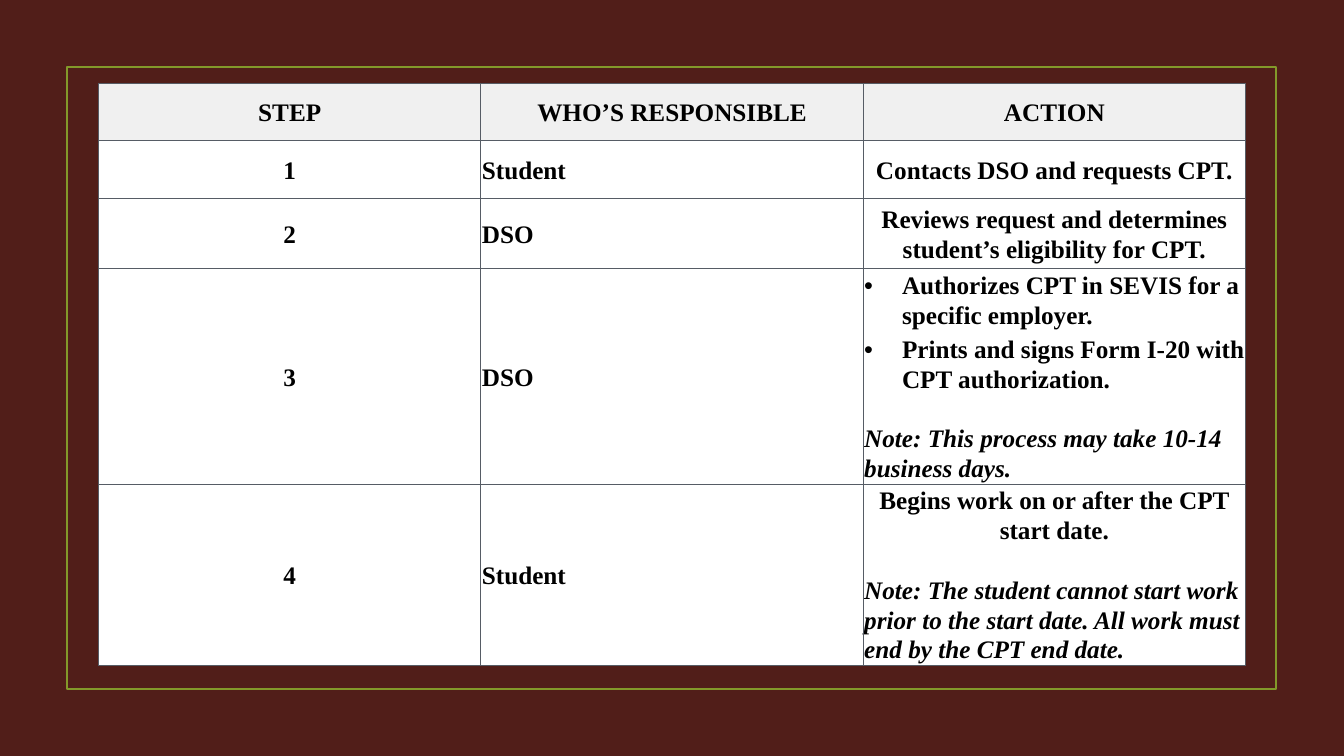
from dataclasses import dataclass

from lxml import etree
from pptx import Presentation
from pptx.dml.color import RGBColor
from pptx.enum import shapes, text
from pptx.oxml import ns
from pptx.util import Pt


@dataclass(frozen=True)
class Theme:
    background: str = "511E19"
    frame: str = "83992A"
    border: str = "565C65"
    header: str = "F0F0F0"
    body: str = "FFFFFF"
    ink: str = "000000"
    font: str = "Times New Roman"
    size: float = 18
    line_spacing: float = 1.07
    inset: float = 0.72
    frame_width: float = 1.25
    border_width: float = 1
    bullet_indent: float = 27


@dataclass(frozen=True)
class Para:
    text: str
    centred: bool = False
    bullet: bool = False
    italic: bool = False
    before: float = 0
    after: float = 0


@dataclass(frozen=True)
class Step:
    who: str
    action: tuple[Para, ...]
    height: float


THEME = Theme()
NOTE_GAP = 21.4
HEADER_HEIGHT = 41.04
COLUMN_WIDTH = 273.1
HEADINGS = ("STEP", "WHO’S RESPONSIBLE", "ACTION")
STEPS = (
    Step("Student", (Para("Contacts DSO and requests CPT.", centred=True),), 41.04),
    Step("DSO", (Para("Reviews request and determines student’s eligibility for CPT.",
                      centred=True),), 50.4),
    Step("DSO", (
        Para("Authorizes CPT in SEVIS for a specific employer.", bullet=True, after=3),
        Para("Prints and signs Form I-20 with CPT authorization.", bullet=True),
        Para("Note: This process may take 10-14 business days.", italic=True, before=NOTE_GAP),
    ), 153.5),
    Step("Student", (
        Para("Begins work on or after the CPT start date.", centred=True),
        Para("Note: The student cannot start work prior to the start date. "
             "All work must end by the CPT end date.", italic=True, before=NOTE_GAP),
    ), 129.3),
)


def rgb(value: str) -> RGBColor:
    return RGBColor.from_string(value)


def add_frame(slide) -> None:
    sp = slide.shapes.add_shape(shapes.MSO_SHAPE.RECTANGLE, Pt(47.7), Pt(48), Pt(864), Pt(444))
    sp.shadow.inherit = False
    sp.fill.background()
    sp.line.color.rgb = rgb(THEME.frame)
    sp.line.width = Pt(THEME.frame_width)


def add_bullet(p) -> None:
    pPr = p._p.get_or_add_pPr()
    pPr.set("marL", str(Pt(THEME.bullet_indent)))
    pPr.set("indent", str(-Pt(THEME.bullet_indent)))
    etree.SubElement(pPr, ns.qn("a:buFont"), typeface="Arial")
    etree.SubElement(pPr, ns.qn("a:buChar"), char="•")


def write_paragraph(p, para: Para) -> None:
    if para.bullet:
        add_bullet(p)
    p.alignment = text.PP_ALIGN.CENTER if para.centred else text.PP_ALIGN.LEFT
    p.line_spacing = THEME.line_spacing
    p.space_before = Pt(para.before)
    p.space_after = Pt(para.after)
    r = p.add_run()
    r.text = para.text
    r.font.name = THEME.font
    r.font.size = Pt(THEME.size)
    r.font.bold = True
    r.font.italic = para.italic
    r.font.color.rgb = rgb(THEME.ink)


def add_borders(cell) -> None:
    tcPr = cell._tc.get_or_add_tcPr()
    for side in ("lnL", "lnR", "lnT", "lnB"):
        ln = etree.SubElement(tcPr, ns.qn(f"a:{side}"), w=str(Pt(THEME.border_width)))
        fill = etree.SubElement(ln, ns.qn("a:solidFill"))
        etree.SubElement(fill, ns.qn("a:srgbClr"), val=THEME.border)


def fill_cell(cell, paras: tuple[Para, ...], colour: str) -> None:
    add_borders(cell)
    cell.fill.solid()
    cell.fill.fore_color.rgb = rgb(colour)
    cell.margin_left = cell.margin_right = Pt(THEME.inset)
    cell.margin_top = cell.margin_bottom = Pt(THEME.inset)
    cell.vertical_anchor = text.MSO_ANCHOR.MIDDLE
    tf = cell.text_frame
    for i, para in enumerate(paras):
        write_paragraph(tf.add_paragraph() if i else tf.paragraphs[0], para)


def add_steps_table(slide) -> None:
    heights = [HEADER_HEIGHT] + [step.height for step in STEPS]
    rows = [[(Para(heading, centred=True),) for heading in HEADINGS]]
    for number, step in enumerate(STEPS, 1):
        rows.append([(Para(str(number), centred=True),), (Para(step.who),), step.action])

    table = slide.shapes.add_table(
        len(rows), len(HEADINGS), Pt(70.4), Pt(59.6),
        Pt(COLUMN_WIDTH * len(HEADINGS)), Pt(sum(heights))).table
    table.first_row = table.horz_banding = False
    for column in table.columns:
        column.width = Pt(COLUMN_WIDTH)
    for i, (row, height) in enumerate(zip(rows, heights)):
        table.rows[i].height = Pt(height)
        for j, paras in enumerate(row):
            fill_cell(table.cell(i, j), paras, THEME.body if i else THEME.header)


def main() -> None:
    prs = Presentation()
    prs.slide_width, prs.slide_height = Pt(960), Pt(540)
    slide = prs.slides.add_slide(prs.slide_layouts[6])
    slide.background.fill.solid()
    slide.background.fill.fore_color.rgb = rgb(THEME.background)
    add_frame(slide)
    add_steps_table(slide)
    prs.save("out.pptx")


if __name__ == "__main__":
    main()
